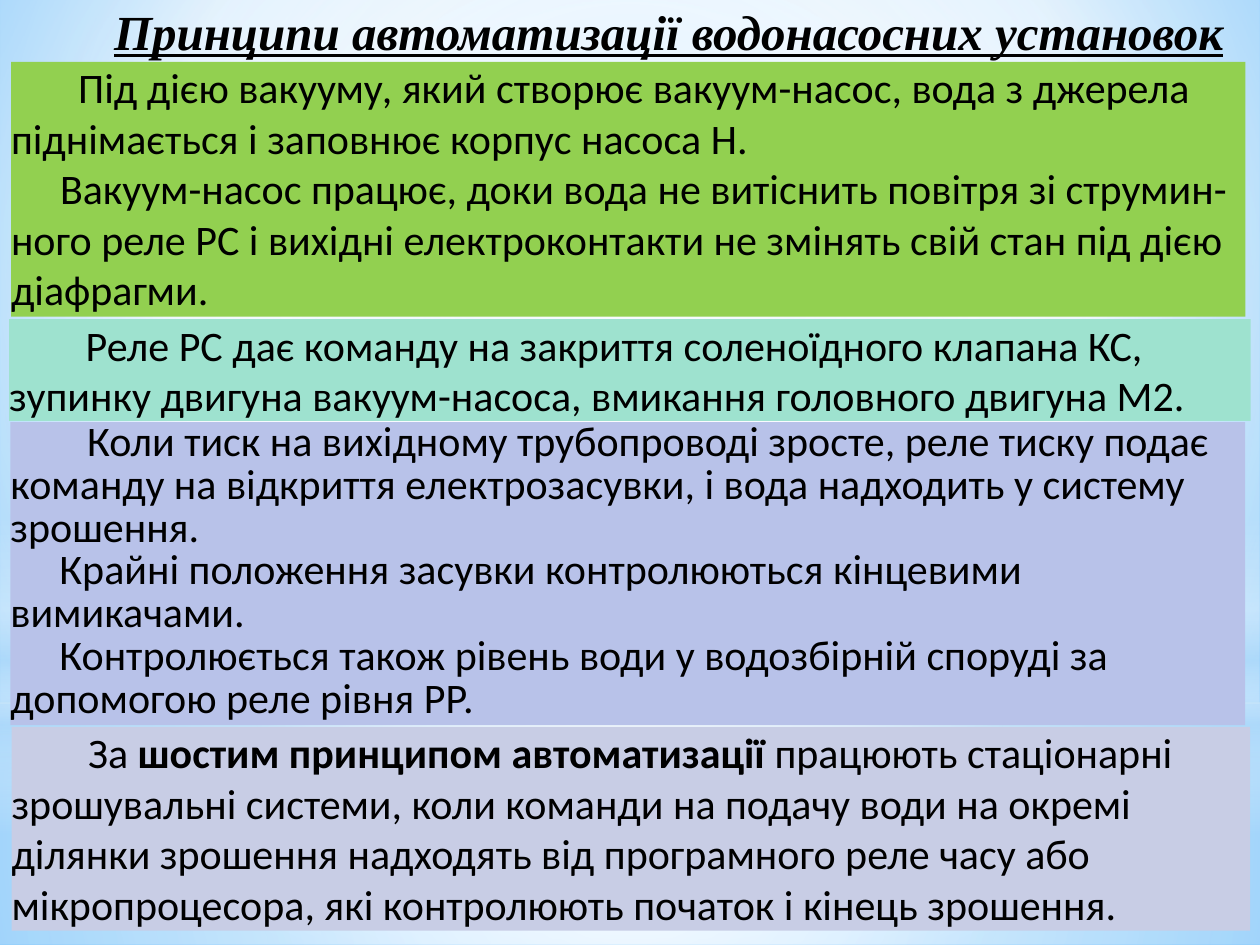
from lxml.etree import SubElement
from pptx import Presentation
from pptx.dml.color import RGBColor
from pptx.enum.shapes import MSO_SHAPE
from pptx.enum.text import MSO_ANCHOR, MSO_AUTO_SIZE, PP_ALIGN
from pptx.oxml.ns import qn
from pptx.util import Pt

COLORS = {
    "text": "000000", "white": "FFFFFF", "haze": "B4DCFA",
    "sky": "9ED5FF", "deep sky": "5BB9FF",
    "green": "92D050", "mint": "9EE2CF", "periwinkle": "B8C2E9", "lavender": "C8CDE5",
}
CENTER = (50, 50, 50, 50)


def set_gradient(fill, owner, stops, focus=None):
    """Stops are (position %, color, opacity %); focus is the radial centre, None is vertical."""
    fill.gradient()
    gradient = owner.find(".//" + qn("a:gradFill"))
    for child in list(gradient):
        gradient.remove(child)
    stop_list = SubElement(gradient, qn("a:gsLst"))
    for position, color, opacity in stops:
        stop = SubElement(stop_list, qn("a:gs"), pos=str(position * 1000))
        rgb = SubElement(stop, qn("a:srgbClr"), val=COLORS[color])
        if opacity < 100:
            SubElement(rgb, qn("a:alpha"), val=str(opacity * 1000))
    if focus is None:
        SubElement(gradient, qn("a:lin"), ang="5400000", scaled="0")
    else:
        radial = SubElement(gradient, qn("a:path"), path="circle")
        edges = {side: str(value * 1000) for side, value in zip("ltrb", focus)}
        SubElement(radial, qn("a:fillToRect"), **edges)


def prepare_frame(frame, wrap):
    frame.margin_left = frame.margin_top = frame.margin_right = frame.margin_bottom = 0
    frame.vertical_anchor = MSO_ANCHOR.TOP
    frame.auto_size = MSO_AUTO_SIZE.NONE
    frame.word_wrap = wrap


presentation = Presentation()
presentation.slide_width, presentation.slide_height = Pt(720), Pt(540)
slide = presentation.slides.add_slide(presentation.slide_layouts[5])

# Background and its soft light layers
set_gradient(slide.background.fill, slide.element,
             [(0, "sky", 100), (60, "white", 100), (100, "deep sky", 100)], (20, 10, 20, 60))
light_layers = [
    (MSO_SHAPE.RECTANGLE, 401.76, 138.24,
     [(0, "white", 91), (37, "white", 76), (100, "haze", 79)], CENTER),
    (MSO_SHAPE.RECTANGLE, 0, 401.76,
     [(0, "white", 89), (48, "white", 62), (100, "haze", 79)], CENTER),
    (MSO_SHAPE.RECTANGLE, 296.64, 180,
     [(0, "white", 0), (29, "white", 30), (45, "haze", 40),
      (55, "white", 26), (65, "haze", 60), (100, "white", 0)], None),
    (MSO_SHAPE.OVAL, 126, 401.76, [(0, "white", 100), (56, "white", 0)], CENTER),
]
for kind, top, height, stops, focus in light_layers:
    layer = slide.shapes.add_shape(kind, 0, Pt(top), Pt(720), Pt(height))
    layer.shadow.inherit = False
    layer.line.fill.background()
    set_gradient(layer.fill, layer.element, stops, focus)

# Text panels: box, color, line spacing, paragraphs as (first-line indent, runs of (text, bold))
panels = [
    ((6.3, 35.4, 705.4, 145.6), "green", 1, [
        (38.4, [("Під дією вакууму, який створює вакуум-насос, вода з джерела піднімається "
                 "і заповнює корпус насоса Н.", False)]),
        (28, [("Вакуум-насос працює, доки вода не витіснить повітря зі струмин-ного реле РС "
               "і вихідні електроконтакти не змінять свій стан під дією діафрагми.", False)]),
    ]),
    ((5.2, 182.3, 709.5, 58.2), "mint", 1, [
        (43.8, [("Реле РС дає команду на закриття соленоїдного клапана КС, зупинку двигуна "
                 "вакуум-насоса, вмикання головного двигуна М2.", False)]),
    ]),
    ((6, 241.2, 705.6, 173.2), "periwinkle", 0.85, [
        (43.8, [("Коли тиск на вихідному трубопроводі зросте, реле тиску подає команду на "
                 "відкриття електрозасувки, і вода надходить у систему зрошення.", False)]),
        (28, [("Крайні положення засувки контролюються кінцевими вимикачами.", False)]),
        (28, [("Контролюється також рівень води у водозбірній споруді за допомогою "
               "реле рівня РР.", False)]),
    ]),
    ((6.6, 415.4, 707.8, 116.4), "lavender", 1, [
        (43.8, [("За ", False), ("шостим принципом автоматизації", True),
                (" працюють стаціонарні зрошувальні системи, коли команди на подачу води "
                 "на окремі ділянки зрошення надходять від програмного реле часу або "
                 "мікропроцесора, які контролюють початок і кінець зрошення.", False)]),
    ]),
]
for box, color, line_spacing, paragraphs in panels:
    panel = slide.shapes.add_shape(MSO_SHAPE.RECTANGLE, *map(Pt, box))
    panel.shadow.inherit = False
    panel.fill.solid()
    panel.fill.fore_color.rgb = RGBColor.from_string(COLORS[color])
    panel.line.fill.background()
    frame = panel.text_frame
    prepare_frame(frame, wrap=True)
    for index, (indent, runs) in enumerate(paragraphs):
        paragraph = frame.add_paragraph() if index else frame.paragraphs[0]
        paragraph.alignment = PP_ALIGN.LEFT
        paragraph.line_spacing = line_spacing
        paragraph._p.get_or_add_pPr().set("indent", str(Pt(indent)))
        for text, bold in runs:
            run = paragraph.add_run()
            run.text = text
            run.font.name, run.font.size, run.font.bold = "Calibri", Pt(24), bold
            run.font.color.rgb = RGBColor.from_string(COLORS["text"])

# Title, brought in front of the light layers
title = slide.shapes.title
title.left, title.top, title.width, title.height = Pt(65.2), Pt(0.8), Pt(635), Pt(34)
prepare_frame(title.text_frame, wrap=False)
paragraph = title.text_frame.paragraphs[0]
paragraph.alignment = PP_ALIGN.LEFT
run = paragraph.add_run()
run.text = "Принципи автоматизації водонасосних установок"
run.font.name, run.font.size = "Times New Roman", Pt(28)
run.font.bold = run.font.italic = run.font.underline = True
run.font.color.rgb = RGBColor.from_string(COLORS["text"])
slide.shapes.element.append(title.element)

presentation.save("out.pptx")
